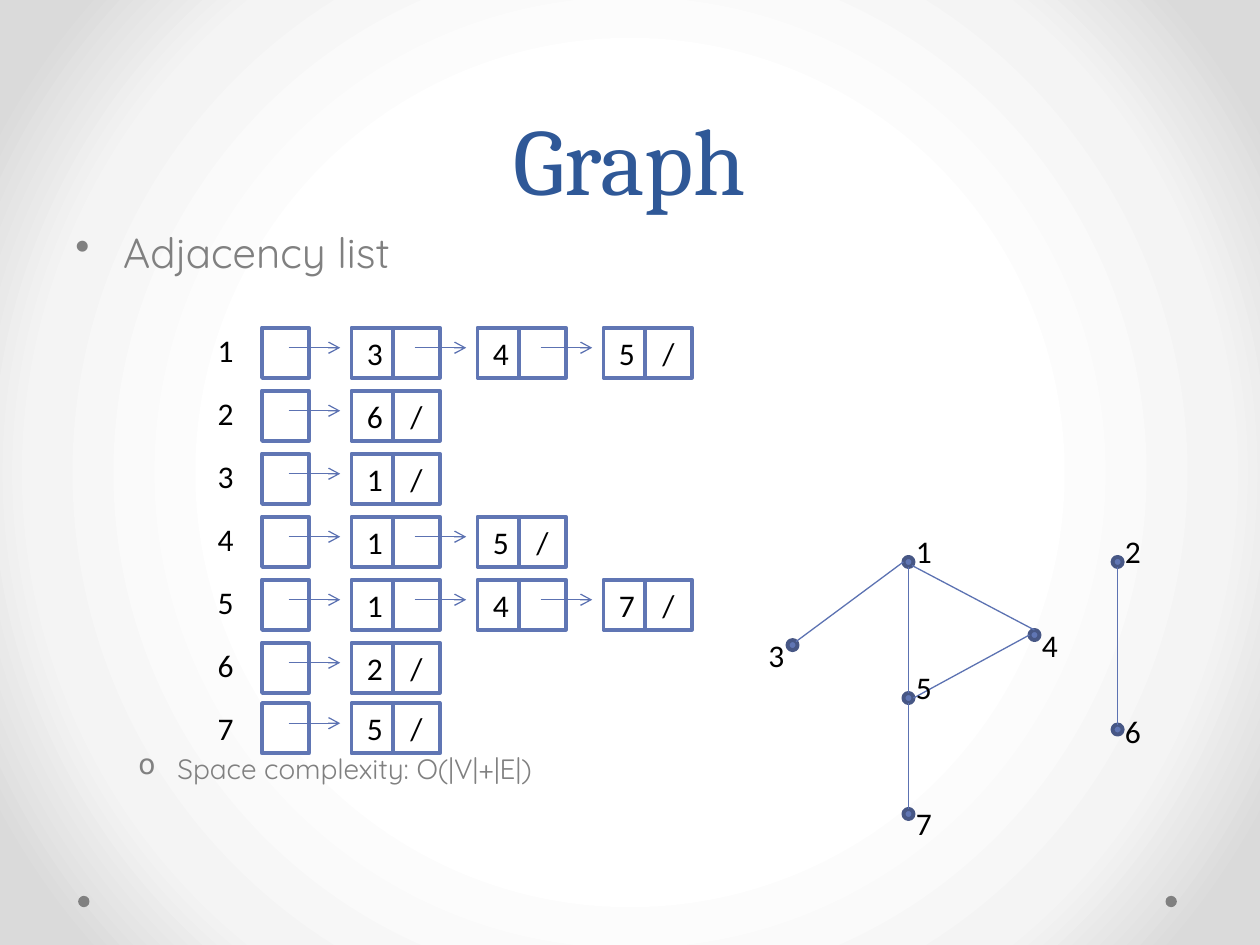
from dataclasses import dataclass

import pptx
import pptx.dml.color
import pptx.enum.shapes
import pptx.enum.text
import pptx.oxml
import pptx.oxml.ns
import pptx.util

Inches = pptx.util.Inches
Pt = pptx.util.Pt
Shape = pptx.enum.shapes.MSO_SHAPE
Align = pptx.enum.text.PP_ALIGN
Anchor = pptx.enum.text.MSO_ANCHOR

BLUE = "6076B4"
EDGE = "5C72B2"
GRAY = "808080"
DOT = 0.08
CELL_W, CELL_H = 0.37, 0.4


@dataclass
class Node:
    x: float
    y: float
    text_x: float
    text_y: float


@dataclass
class Edge:
    start: int
    start_at: tuple[float, float]
    end: int
    end_at: tuple[float, float]


@dataclass
class Item:
    text: str
    size: int
    mark: str
    left: float
    hang: float
    space: int


NODES = {
    1: Node(7.17, 4.42, 7.17, 4.17),
    2: Node(8.83, 4.42, 8.83, 4.17),
    3: Node(6.25, 5.08, 6, 5),
    4: Node(8.17, 5, 8.17, 4.92),
    5: Node(7.17, 5.5, 7.17, 5.25),
    6: Node(8.83, 5.75, 8.83, 5.6),
    7: Node(7.17, 6.42, 7.17, 6.33),
}
TOP, LEFT, BOTTOM, RIGHT = (0.5, 0), (0, 0.5), (0.5, 1), (1, 0.5)
EDGES = [
    Edge(1, (0.85, 0.85), 4, TOP),
    Edge(4, LEFT, 5, RIGHT),
    Edge(5, TOP, 1, BOTTOM),
    Edge(3, (0.85, 0.15), 1, LEFT),
    Edge(5, BOTTOM, 7, TOP),
    Edge(2, BOTTOM, 6, TOP),
]
LISTS = ["345", "6", "1", "15", "147", "2", "5"]
ITEMS = [
    Item("Adjacency list", 24, "•", 0.38, -0.38, 0),
    Item("Space complexity: O(|V|+|E|)", 16, "o", 0.81, -0.31, 271),
]


def color(code: str) -> pptx.dml.color.RGBColor:
    return pptx.dml.color.RGBColor.from_string(code)


def style(target, values: dict) -> None:
    for name, value in values.items():
        setattr(target, name, value)


def write(para, text: str, size: int = 18, face: str = "Calibri", code: str = "000000") -> None:
    run = para.add_run()
    run.text = text
    style(run.font, {"size": Pt(size), "name": face})
    run.font.color.rgb = color(code)


def add_text(slide, x: float, y: float, wide: float, high: float):
    frame = slide.shapes.add_textbox(*map(Inches, (x, y, wide, high))).text_frame
    frame.word_wrap = True
    return frame


def add_shape(slide, kind, x: float, y: float, wide: float, high: float,
              fill: str, line: str = ""):
    shape = slide.shapes.add_shape(kind, *map(Inches, (x, y, wide, high)))
    shape.shadow.inherit = False
    shape.fill.solid()
    shape.fill.fore_color.rgb = color(fill)
    if line:
        shape.line.color.rgb = color(line)
        shape.line.width = Pt(2.25)
    else:
        shape.line.fill.background()
    return shape


def add_line(slide, x1: float, y1: float, x2: float, y2: float, arrow: bool = False) -> None:
    line = slide.shapes.add_connector(
        pptx.enum.shapes.MSO_CONNECTOR.STRAIGHT, *map(Inches, (x1, y1, x2, y2)))
    line.line.color.rgb = color(EDGE)
    line.line.width = Pt(0.75)
    make = pptx.oxml.ns.qn
    if arrow:
        tail = line.line._get_or_add_ln().makeelement(make("a:tailEnd"), {"type": "arrow"})
        line.line._get_or_add_ln().append(tail)
    props = line._element.spPr
    props.append(props.makeelement(make("a:effectLst"), {}))


def add_cell(slide, x: float, y: float, text: str = "") -> None:
    cell = add_shape(slide, Shape.RECTANGLE, x, y, CELL_W, CELL_H, "FFFFFF", BLUE)
    if text:
        cell.text_frame.vertical_anchor = Anchor.TOP
        para = cell.text_frame.paragraphs[0]
        para.alignment = Align.CENTER
        write(para, text)


def add_list(slide, row: int, links: str) -> None:
    y = min(2.6 + 0.5 * row, 5.58)
    add_cell(slide, 2.08, y)
    for col, link in enumerate(links):
        add_line(slide, 2.29 + col, y + 0.16, 2.7 + col, y + 0.16, arrow=True)
        add_cell(slide, 2.79 + col, y, link)
        add_cell(slide, 3.12 + col, y, "/" if col == len(links) - 1 else "")
    para = add_text(slide, 1.58, 2.58 + 0.5 * row, 0.42, 0.42).paragraphs[0]
    para.alignment = Align.CENTER
    write(para, str(row + 1))


def add_graph(slide) -> None:
    for node in NODES.values():
        add_shape(slide, Shape.OVAL, node.x, node.y, DOT, DOT, BLUE, "475785")
    for edge in EDGES:
        ends = []
        for key, (across, down) in ((edge.start, edge.start_at), (edge.end, edge.end_at)):
            node = NODES[key]
            ends += [node.x + DOT * across, node.y + DOT * down]
        add_line(slide, *ends)
    for key, node in NODES.items():
        frame = add_text(slide, node.text_x, node.text_y, 0.33, 0.4)
        write(frame.paragraphs[0], str(key))


def add_item(para, item: Item) -> None:
    props = para._p.get_or_add_pPr()
    props.set("marL", str(Inches(item.left)))
    props.set("indent", str(Inches(item.hang)))
    mark = props.makeelement(pptx.oxml.ns.qn("a:buChar"), {"char": item.mark})
    props.append(mark)
    if item.space:
        para.space_before = Pt(item.space)
    write(para, item.text, item.size, "Quicksand", GRAY)


def add_back(slide) -> None:
    stops = "".join(
        f'<a:gs pos="{place * 1000}"><a:srgbClr val="{code}"/></a:gs>'
        for place, code in ((50, "FFFFFF"), (76, "F4F4F4"), (92, "DADADA")))
    slide.element.cSld.insert(0, pptx.oxml.parse_xml(
        f'<p:bg {pptx.oxml.ns.nsdecls("p", "a")}><p:bgPr><a:gradFill rotWithShape="1">'
        f'<a:gsLst>{stops}</a:gsLst><a:path path="circle">'
        '<a:fillToRect l="50000" t="50000" r="50000" b="50000"/></a:path>'
        '</a:gradFill><a:effectLst/></p:bgPr></p:bg>'))


def main() -> None:
    deck = pptx.Presentation()
    style(deck, {"slide_width": Inches(10), "slide_height": Inches(7.5)})
    slide = deck.slides.add_slide(deck.slide_layouts[6])
    add_back(slide)
    for x in (9.25, 0.62):
        add_shape(slide, Shape.OVAL, x, 7.11, 0.09, 0.09, GRAY)

    title = add_text(slide, 0.5, 0, 9, 1.75)
    title.vertical_anchor = Anchor.BOTTOM
    style(title.paragraphs[0], {"alignment": Align.CENTER, "line_spacing": Pt(58)})
    write(title.paragraphs[0], "Graph", 54, "Cambria", "2F5897")

    body = add_text(slide, 0.5, 1.75, 9, 5.33)
    for place, item in enumerate(ITEMS):
        add_item(body.add_paragraph() if place else body.paragraphs[0], item)

    add_graph(slide)
    for row, links in enumerate(LISTS):
        add_list(slide, row, links)
    deck.save("out.pptx")


if __name__ == "__main__":
    main()
